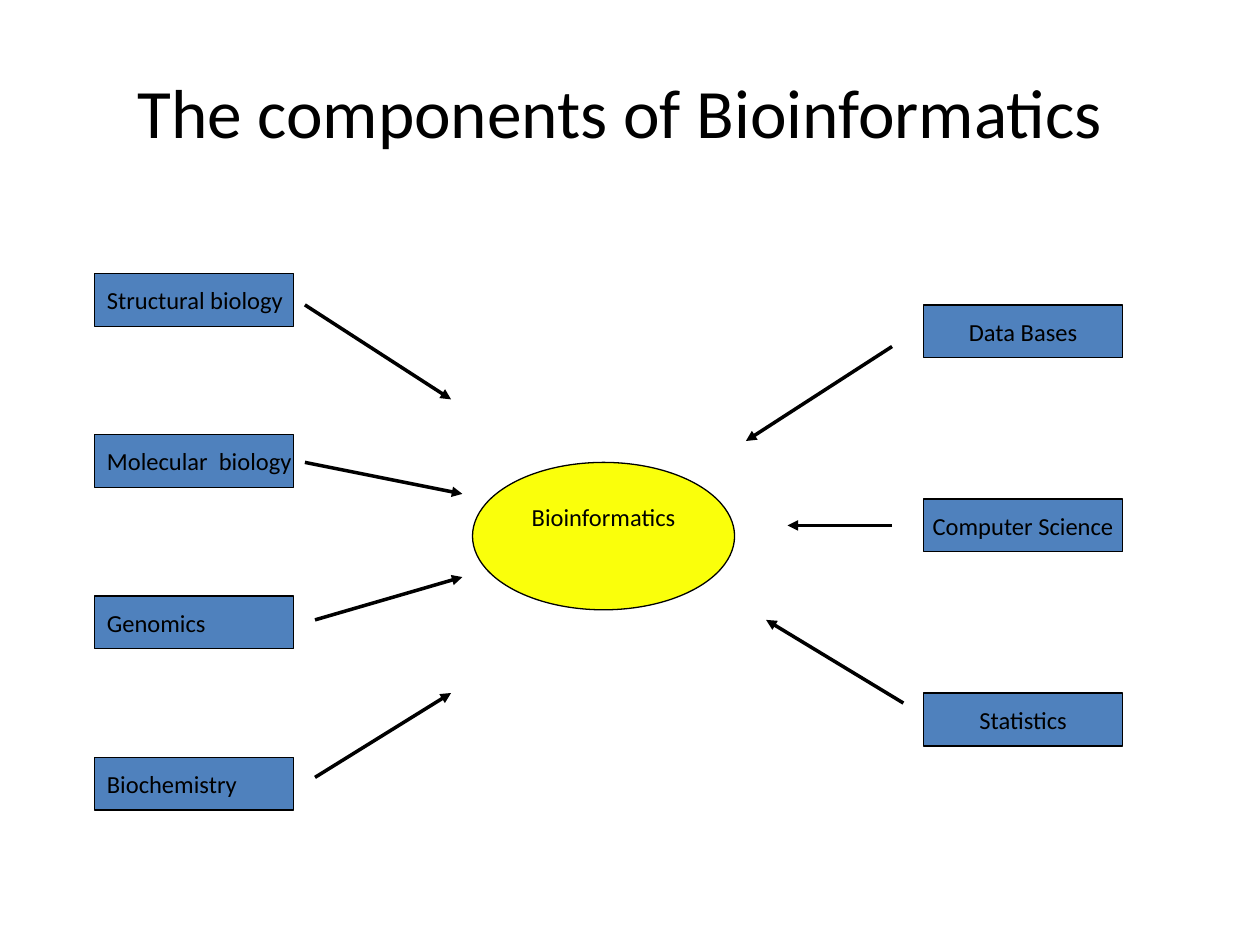
from lxml import etree
from pptx import Presentation
from pptx.dml.color import RGBColor
from pptx.enum.shapes import MSO_CONNECTOR, MSO_SHAPE
from pptx.enum.text import MSO_ANCHOR, PP_ALIGN
from pptx.oxml.ns import qn
from pptx.util import Inches, Pt

RECTANGLE, ELLIPSE = MSO_SHAPE.RECTANGLE, MSO_SHAPE.OVAL
STRAIGHT = MSO_CONNECTOR.STRAIGHT
LEFT, CENTER = PP_ALIGN.LEFT, PP_ALIGN.CENTER
MIDDLE = MSO_ANCHOR.MIDDLE

BLACK, BLUE, YELLOW = "000000", "4F81BD", "FAFF0B"
BOX_WIDTH, BOX_HEIGHT = 1.58, 0.42


def color(value):
    return RGBColor.from_string(value)


class Diagram:
    font_name = "Calibri"

    def __init__(self, page):
        self.page = page

    def label(self, shape, text, size, align, wrap):
        frame = shape.text_frame
        frame.word_wrap = wrap
        frame.vertical_anchor = MIDDLE
        para = frame.paragraphs[0]
        para.text = text
        para.alignment = align
        para.font.name = self.font_name
        para.font.size = Pt(size)
        para.font.color.rgb = color(BLACK)

    def title(self, text, left, top, width, height):
        box = self.page.shapes.add_textbox(
            Inches(left), Inches(top), Inches(width), Inches(height))
        self.label(box, text, 39.6, CENTER, True)

    def node(self, kind, text, left, top, width, height, fill, align=CENTER):
        shape = self.page.shapes.add_shape(
            kind, Inches(left), Inches(top), Inches(width), Inches(height))
        shape.shadow.inherit = False
        shape.fill.solid()
        shape.fill.fore_color.rgb = color(fill)
        shape.line.color.rgb = color(BLACK)
        shape.line.width = Pt(0.75)
        self.label(shape, text, 14, align, False)
        return shape

    def column(self, names, left, top, step, align):
        for index, name in enumerate(names):
            self.node(RECTANGLE, name, left, top + index * step,
                      BOX_WIDTH, BOX_HEIGHT, BLUE, align)

    def arrow(self, start, end):
        connector = self.page.shapes.add_connector(
            STRAIGHT, *(Inches(value) for value in (*start, *end)))
        connector.line.color.rgb = color(BLACK)
        connector.line.width = Pt(2)
        properties = connector._element.spPr
        outline = properties.find(qn("a:ln"))
        etree.SubElement(outline, qn("a:tailEnd"), type="triangle")
        etree.SubElement(properties, qn("a:effectLst"))


def main():
    deck = Presentation()
    deck.slide_width, deck.slide_height = Inches(10), Inches(7.5)
    diagram = Diagram(deck.slides.add_slide(deck.slide_layouts[6]))

    # Title
    diagram.title("The components of Bioinformatics", 0.67, 0.25, 8.5, 1.25)

    # Contributing fields: life sciences left, computing right
    diagram.column(["Structural biology", "Molecular  biology", "Genomics",
                    "Biochemistry"], 0.75, 2.17, 1.28, LEFT)
    diagram.column(["Data Bases", "Computer Science", "Statistics"],
                   7.33, 2.42, 1.54, CENTER)

    # Centre, with its label raised by a deeper bottom margin
    center = diagram.node(ELLIPSE, "Bioinformatics", 3.75, 3.67, 2.08, 1.17,
                          YELLOW)
    center.text_frame.margin_bottom = Inches(0.35)

    # Arrows from the fields towards the centre
    arrows = [
        ((2.42, 2.42), (3.58, 3.17)),
        ((2.42, 3.67), (3.67, 3.92)),
        ((2.5, 4.92), (3.67, 4.58)),
        ((2.5, 6.17), (3.58, 5.5)),
        ((7.08, 2.75), (5.92, 3.5)),
        ((7.08, 4.17), (6.25, 4.17)),
        ((7.17, 5.58), (6.08, 4.92)),
    ]
    for start, end in arrows:
        diagram.arrow(start, end)

    deck.save("out.pptx")


if __name__ == "__main__":
    main()
